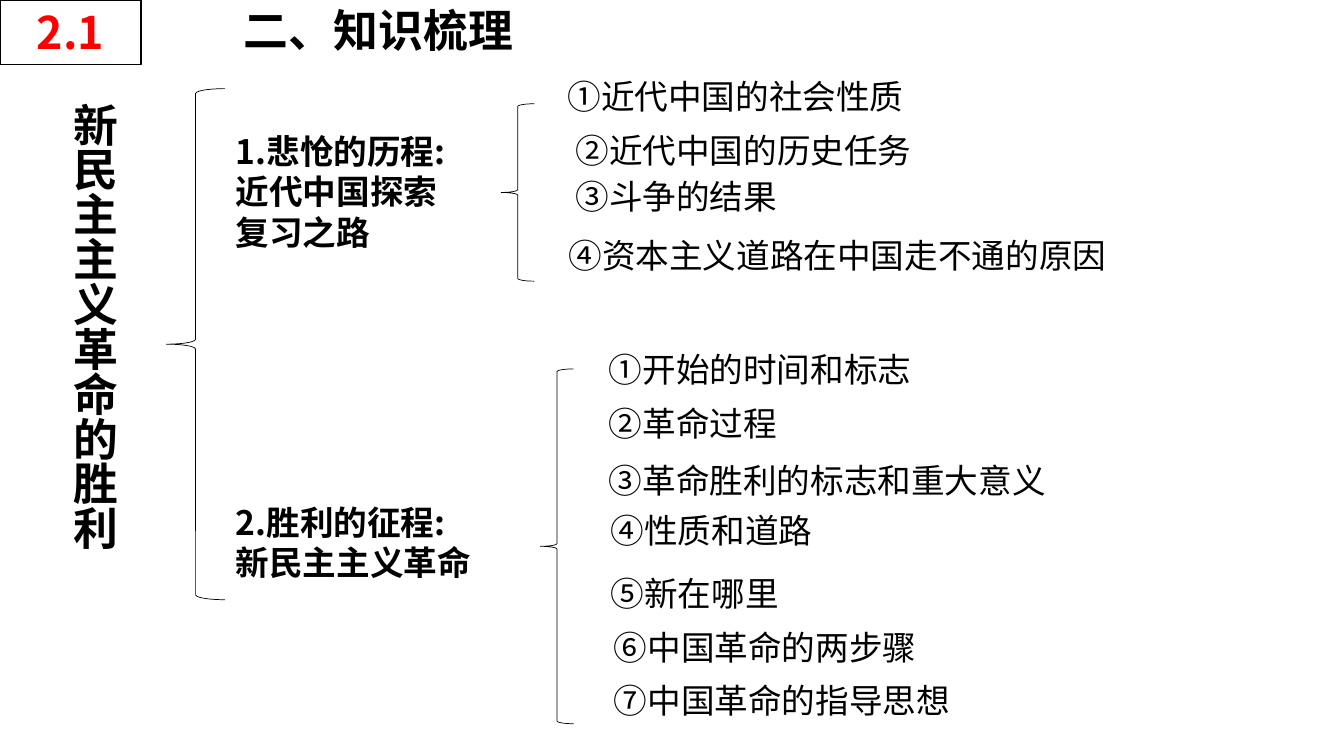
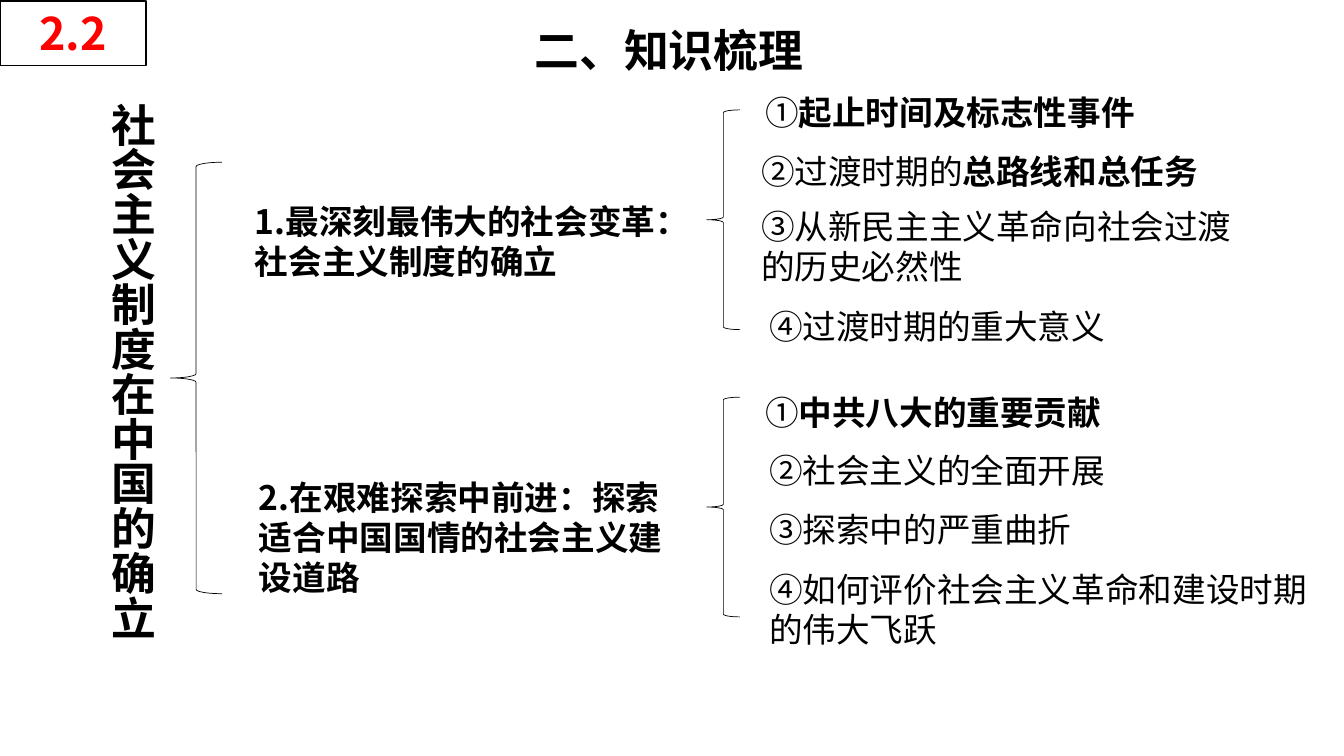
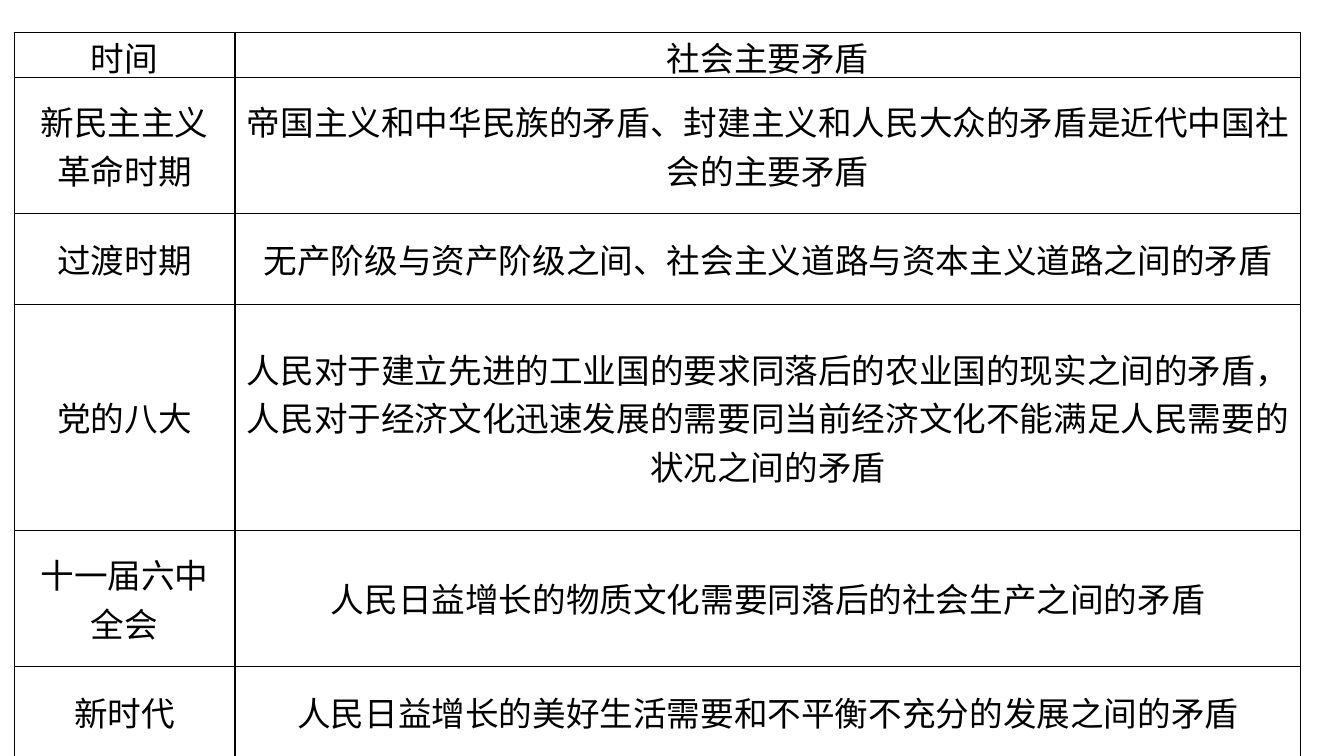
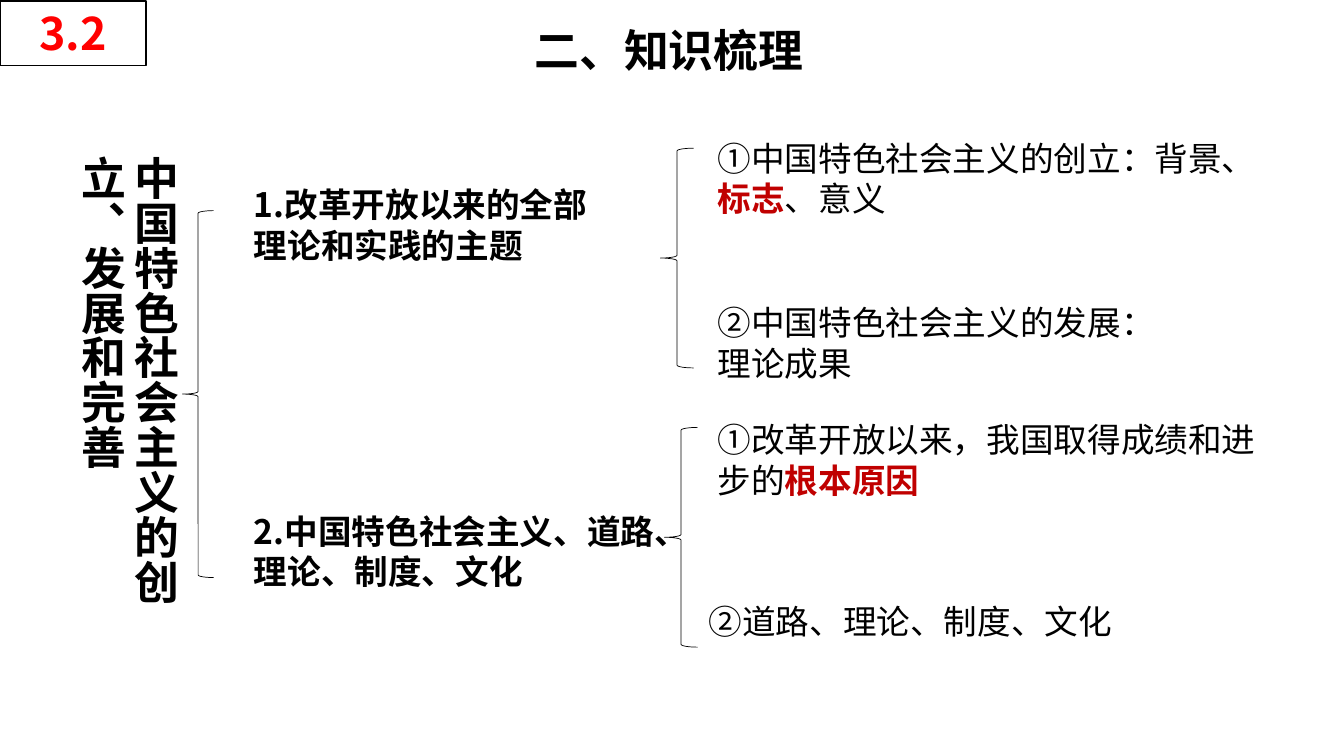
from lxml import etree
from pptx import Presentation
from pptx.dml.color import RGBColor
from pptx.enum.shapes import MSO_SHAPE as SHAPE
from pptx.enum.text import MSO_ANCHOR as ANCHOR, MSO_AUTO_SIZE as FIT, PP_ALIGN as ALIGN
from pptx.oxml.ns import qn
from pptx.util import Inches, Pt

FONT = "Noto Sans CJK SC"
COLORS = {"ink": "000000", "badge": "FF0000", "accent": "C00000", "border": "080000"}
HEAD_SIZE, BODY_SIZE = 32, 24
LINE_FACTOR = 1.2
TITLE_ONLY, BLANK = 5, 6
ITEM_W, ITEM_H, TWO_LINES_H = 5.67, 0.5, 0.91

CONTRADICTIONS = [
    ("时间", "社会主要矛盾"),
    ("新民主主义革命时期",
     "帝国主义和中华民族的矛盾、封建主义和人民大众的矛盾是近代中国社会的主要矛盾"),
    ("过渡时期", "无产阶级与资产阶级之间、社会主义道路与资本主义道路之间的矛盾"),
    ("党的八大",
     "人民对于建立先进的工业国的要求同落后的农业国的现实之间的矛盾，"
     "人民对于经济文化迅速发展的需要同当前经济文化不能满足人民需要的状况之间的矛盾"),
    ("十一届六中全会", "人民日益增长的物质文化需要同落后的社会生产之间的矛盾"),
    ("新时代", "人民日益增长的美好生活需要和不平衡不充分的发展之间的矛盾"),
]


def rgb(name):
    return RGBColor.from_string(COLORS[name])


def box(x, y, w, h):
    return [Inches(v) for v in (x, y, w, h)]


def style_run(r, size, bold=False, color="ink"):
    r.font.size = Pt(size)
    r.font.bold = bold
    r.font.name = FONT
    r.font.color.rgb = rgb(color)
    ea = etree.SubElement(r._r.rPr, qn("a:ea"))
    ea.set("typeface", FONT)


def write(tf, content, size, bold=False, color="ink", align=None, spacing=LINE_FACTOR):
    """Fill a frame; content is text with line breaks, or a list of (text, bold, colour) runs."""
    if isinstance(content, str):
        paragraphs = [[(line, bold, color)] for line in content.split("\n")]
    else:
        paragraphs = [content]
    for i, runs in enumerate(paragraphs):
        p = tf.add_paragraph() if i else tf.paragraphs[0]
        p.alignment = align
        if spacing:
            p.line_spacing = Pt(round(size * spacing, 1))
        for text, run_bold, run_color in runs:
            r = p.add_run()
            r.text = text
            style_run(r, size, run_bold, run_color)


def add_text(slide, content, x, y, w, h, size=BODY_SIZE, bold=False, vertical=False):
    tf = slide.shapes.add_textbox(*box(x, y, w, h)).text_frame
    tf.word_wrap = True
    tf.auto_size = FIT.SHAPE_TO_FIT_TEXT
    if vertical:
        tf._txBody.bodyPr.set("vert", "eaVert")
    write(tf, content, size, bold)


def add_items(slide, items):
    """Add list entries given as (content, left, top[, width, height])."""
    for content, x, y, *size in items:
        w, h = size or (ITEM_W, ITEM_H)
        add_text(slide, content, x, y, w, h)


def add_outline(slide, kind, x, y, w, h, weight):
    sp = slide.shapes.add_shape(kind, *box(x, y, w, h))
    sp.shadow.inherit = False
    sp.fill.background()
    sp.line.color.rgb = rgb("ink")
    sp.line.width = Pt(weight)
    return sp


def add_braces(slide, *places):
    for place in places:
        add_outline(slide, SHAPE.LEFT_BRACE, *place, 0.5)


def add_topic_slide(prs, number, title_at=(3.39, -0.09), badge=(0, 0.01, 1.45, 0.64)):
    slide = prs.slides.add_slide(prs.slide_layouts[TITLE_ONLY])
    title = slide.shapes.title
    title.left, title.top, title.width, title.height = box(*title_at, 6.49, 0.81)
    tf = title.text_frame
    tf.word_wrap = True
    tf.auto_size = FIT.SHAPE_TO_FIT_TEXT
    tf.vertical_anchor = ANCHOR.TOP
    write(tf, "二、知识梳理", HEAD_SIZE, True, align=ALIGN.CENTER, spacing=1.5 * LINE_FACTOR)

    tf = add_outline(slide, SHAPE.RECTANGLE, *badge, 1).text_frame
    tf.vertical_anchor = ANCHOR.TOP
    write(tf, number, HEAD_SIZE, True, "badge", ALIGN.CENTER)
    return slide


def add_theme(slide, text, x, y, w, h):
    add_text(slide, text, x, y, w, h, HEAD_SIZE, bold=True, vertical=True)


def add_branch(slide, text, x, y, w, h):
    add_text(slide, text, x, y, w, h, bold=True)


def set_borders(cell):
    tc_pr = cell._tc.get_or_add_tcPr()
    for i, side in enumerate(("lnL", "lnR", "lnT", "lnB")):
        ln = etree.Element(qn(f"a:{side}"), w=str(Pt(1)))
        fill = etree.SubElement(ln, qn("a:solidFill"))
        etree.SubElement(fill, qn("a:srgbClr"), val=COLORS["border"])
        tc_pr.insert(i, ln)


def add_grid(slide, rows, x, y, widths, heights):
    place = box(x, y, sum(widths), sum(heights))
    table = slide.shapes.add_table(len(rows), len(widths), *place).table
    table.first_row = table.horz_banding = False
    for column, w in zip(table.columns, widths):
        column.width = Inches(w)
    for row, h, texts in zip(table.rows, heights, rows):
        row.height = Inches(h)
        for cell, text in zip(row.cells, texts):
            cell.fill.background()
            cell.vertical_anchor = ANCHOR.MIDDLE
            cell.margin_top = cell.margin_bottom = 0
            write(cell.text_frame, text, BODY_SIZE, align=ALIGN.CENTER, spacing=None)
            set_borders(cell)


def build_revolution(prs):
    slide = add_topic_slide(prs, "2.1", (0.51, -0.29), (0, 0, 1.4, 0.64))
    add_theme(slide, "新民主主义革命的胜利", 0.51, 0.92, 0.74, 6.3)
    add_braces(slide, (1.65, 0.88, 0.58, 5.07), (4.97, 1.03, 0.33, 1.76),
               (5.36, 3.66, 0.33, 3.52))
    add_branch(slide, "1.悲怆的历程:近代中国探索复习之路", 2.24, 1.25, 2.49, 1.31)
    add_branch(slide, "2.胜利的征程:\n新民主主义革命", 2.24, 4.93, 2.57, TWO_LINES_H)
    add_items(slide, [
        ("①近代中国的社会性质", 5.53, 0.7),
        ("②近代中国的历史任务", 5.61, 1.24),
        ("③斗争的结果", 5.61, 1.7),
        ("④资本主义道路在中国走不通的原因", 5.54, 2.28, 6.83, ITEM_H),
        ("①开始的时间和标志", 5.94, 3.41),
        ("②革命过程", 5.94, 3.95),
        ("③革命胜利的标志和重大意义", 5.94, 4.51),
        ("④性质和道路", 5.96, 5.01),
        ("⑤新在哪里", 5.96, 5.63),
        ("⑥中国革命的两步骤", 5.99, 6.17),
        ("⑦中国革命的指导思想", 5.99, 6.7),
    ])


def build_socialism(prs):
    slide = add_topic_slide(prs, "2.2")
    add_theme(slide, "社会主义制度在中国的确立", 0.89, 0.92, 0.74, 6.3)
    add_braces(slide, (1.69, 1.61, 0.51, 4.28), (7.01, 1.09, 0.33, 2.18),
               (7.01, 3.94, 0.33, 2.18))
    add_branch(slide, "1.最深刻最伟大的社会变革：\n社会主义制度的确立",
               2.43, 1.94, 7.11, TWO_LINES_H)
    add_branch(slide, "2.在艰难探索中前进：探索适合中国国情的社会主义建设道路",
               2.47, 4.68, 4.28, 1.31)
    add_items(slide, [
        ([("①", False, "ink"), ("起止时间及标志性事件", True, "ink")], 7.49, 0.86),
        ([("②过渡时期的", False, "ink"), ("总路线和总任务", True, "ink")], 7.45, 1.45),
        ("③从新民主主义革命向社会过渡的历史必然性", 7.45, 1.99, 4.96, TWO_LINES_H),
        ("④过渡时期的重大意义", 7.53, 2.99),
        ([("①", False, "ink"), ("中共八大的重要贡献", True, "ink")], 7.49, 3.84),
        ("②社会主义的全面开展", 7.53, 4.41),
        ("③探索中的严重曲折", 7.53, 5),
        ("④如何评价社会主义革命和建设时期的伟大飞跃", 7.53, 5.59, ITEM_W, TWO_LINES_H),
    ])


def build_contradictions(prs):
    slide = prs.slides.add_slide(prs.slide_layouts[BLANK])
    add_grid(slide, CONTRADICTIONS, 0.14, 0.32, (2.19, 10.57),
             (0.45, 1.35, 0.9, 2.24, 1.35, 0.9))


def build_reform(prs):
    slide = add_topic_slide(prs, "3.2")
    add_theme(slide, "中国特色社会主义的创立、发展和完善", 0.58, 1.45, 1.28, 4.92)
    add_braces(slide, (1.81, 2.09, 0.31, 3.64), (6.55, 1.47, 0.33, 2.18),
               (6.59, 4.24, 0.33, 2.18))
    add_branch(slide, "1.改革开放以来的全部\n理论和实践的主题", 2.42, 1.78, 7.11, TWO_LINES_H)
    add_branch(slide, "2.中国特色社会主义、道路、理论、制度、文化",
               2.42, 5.02, 4.28, TWO_LINES_H)
    add_items(slide, [
        ([("①中国特色社会主义的创立：背景、", False, "ink"), ("标志", True, "accent"),
          ("、意义", False, "ink")], 7.02, 1.32, ITEM_W, TWO_LINES_H),
        ("②中国特色社会主义的发展：理论成果", 7.02, 2.95, 4.44, TWO_LINES_H),
        ([("①改革开放以来，我国取得成绩和进步的", False, "ink"),
          ("根本原因", True, "accent")], 7.02, 4.11, ITEM_W, TWO_LINES_H),
        ("②道路、理论、制度、文化", 6.93, 5.91),
    ])


def main():
    prs = Presentation()
    prs.slide_width, prs.slide_height = Inches(13.33), Inches(7.5)
    build_revolution(prs)
    build_socialism(prs)
    build_contradictions(prs)
    build_reform(prs)
    prs.save("out.pptx")


if __name__ == "__main__":
    main()
